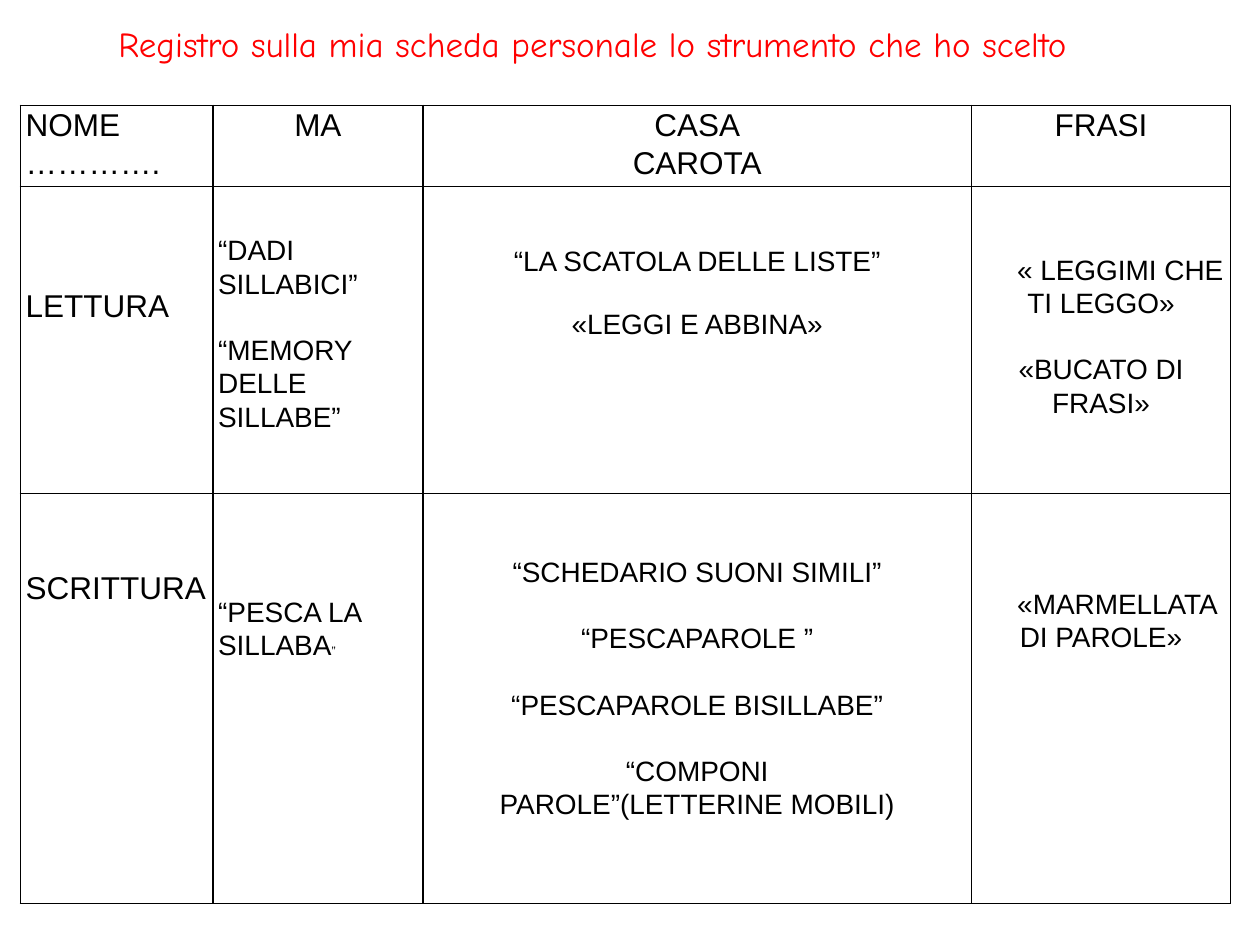
from dataclasses import dataclass

import pptx
import pptx.dml.color
import pptx.enum.text
import pptx.oxml
import pptx.oxml.ns
import pptx.util

Pt = pptx.util.Pt
RGB = pptx.dml.color.RGBColor
ALIGN = pptx.enum.text.PP_ALIGN
ANCHOR = pptx.enum.text.MSO_ANCHOR


@dataclass(frozen=True)
class Theme:
    ink: str = "000000"
    paper: str = "FFFFFF"
    title_color: str = "FF0000"
    title_font: str = "Comic Neue"
    body_font: str = "Arial"
    title_size: int = 20
    label_size: int = 18
    tool_size: int = 16
    small_size: int = 7
    line_spacing: float = 1.07
    border: int = 1


THEME = Theme()
GAP = 19  # space between two tools in a cell


@dataclass(frozen=True)
class Para:
    text: str
    before: float = 0
    indent: float = 0
    small_end: str = ""


@dataclass(frozen=True)
class Entry:
    """Content of one cell; top is the space above its first line."""
    paras: tuple
    top: float = 0
    size: int = THEME.tool_size
    align: object = ALIGN.CENTER


def label(*lines, top=0, align=ALIGN.LEFT):
    return Entry(tuple(Para(t) for t in lines), top, THEME.label_size, align)


def tools(top, *paras, align=ALIGN.CENTER):
    return Entry(paras, top, align=align)


COLUMNS = (110, 120, 313.5, 148)
ROWS = (46.3, 175.6, 234.3)
REGISTER = (
    (
        label("NOME", "…………."),
        label("MA", align=ALIGN.CENTER),
        label("CASA", "CAROTA", align=ALIGN.CENTER),
        label("FRASI", align=ALIGN.CENTER),
    ),
    (
        label("LETTURA", top=57),
        tools(27, Para("“DADI SILLABICI”"),
              Para("“MEMORY DELLE SILLABE”", GAP), align=ALIGN.LEFT),
        tools(33, Para("“LA SCATOLA DELLE LISTE”"),
              Para("«LEGGI E ABBINA»", 17)),
        tools(38, Para("« LEGGIMI CHE TI LEGGO»", indent=22),
              Para("«BUCATO DI FRASI»", GAP)),
    ),
    (
        label("SCRITTURA", top=43),
        tools(58, Para("“PESCA LA SILLABA", small_end="”"), align=ALIGN.LEFT),
        tools(35, Para("“SCHEDARIO SUONI SIMILI”"),
              Para("“PESCAPAROLE ”", GAP),
              Para("“PESCAPAROLE BISILLABE”", GAP),
              Para("“COMPONI", GAP),
              Para("PAROLE”(LETTERINE MOBILI)")),
        tools(53.5, Para("«MARMELLATA DI PAROLE»", indent=18)),
    ),
)


def set_all(obj, values):
    for name, value in values.items():
        setattr(obj, name, value)


def add_run(p, text, font, size, color):
    r = p.add_run()
    r.text = text
    set_all(r.font, {"name": font, "size": Pt(size), "bold": False})
    r.font.color.rgb = RGB.from_string(color)


def add_title(slide, left, top, width, height):
    sp = slide.shapes.title
    set_all(sp, {"left": Pt(left), "top": Pt(top),
                 "width": Pt(width), "height": Pt(height)})
    tf = sp.text_frame
    set_all(tf, {"word_wrap": True, "vertical_anchor": ANCHOR.TOP,
                 "auto_size": pptx.enum.text.MSO_AUTO_SIZE.NONE})
    p = tf.paragraphs[0]
    p.alignment = ALIGN.LEFT
    add_run(p, "Registro sulla mia scheda personale lo strumento che ho scelto",
            THEME.title_font, THEME.title_size, THEME.title_color)


def add_borders(cell):
    tc_pr = cell._tc.get_or_add_tcPr()
    for side in ("lnL", "lnR", "lnT", "lnB"):
        tc_pr.append(pptx.oxml.parse_xml(
            f'<a:{side} {pptx.oxml.ns.nsdecls("a")} w="{Pt(THEME.border)}">'
            f'<a:solidFill><a:srgbClr val="{THEME.ink}"/></a:solidFill>'
            f'</a:{side}>'))


def fill_cell(cell, entry):
    set_all(cell, {"margin_left": Pt(3), "margin_right": Pt(3),
                   "margin_top": Pt(entry.top), "margin_bottom": Pt(0),
                   "vertical_anchor": ANCHOR.TOP})
    add_borders(cell)
    cell.fill.solid()
    cell.fill.fore_color.rgb = RGB.from_string(THEME.paper)
    tf = cell.text_frame
    for i, para in enumerate(entry.paras):
        p = tf.add_paragraph() if i else tf.paragraphs[0]
        set_all(p, {"alignment": entry.align, "space_before": Pt(para.before),
                    "line_spacing": THEME.line_spacing})
        if para.indent:
            p._p.get_or_add_pPr().set("indent", str(Pt(para.indent)))
        add_run(p, para.text, THEME.body_font, entry.size, THEME.ink)
        if para.small_end:
            add_run(p, para.small_end, THEME.body_font, THEME.small_size, THEME.ink)


def add_register(slide, left, top):
    table = slide.shapes.add_table(
        len(ROWS), len(COLUMNS), Pt(left), Pt(top),
        Pt(sum(COLUMNS)), Pt(sum(ROWS))).table
    set_all(table, {"first_row": False, "horz_banding": False})
    for column, width in zip(table.columns, COLUMNS):
        column.width = Pt(width)
    for row, height, entries in zip(table.rows, ROWS, REGISTER):
        row.height = Pt(height)
        for cell, entry in zip(row.cells, entries):
            fill_cell(cell, entry)


def main():
    prs = pptx.Presentation()
    set_all(prs, {"slide_width": Pt(720), "slide_height": Pt(540)})
    slide = prs.slides.add_slide(prs.slide_layouts.get_by_name("Title Only"))
    add_title(slide, 60.5, 9.4, 602.6, 31.7)
    add_register(slide, 11.7, 60.2)
    prs.save("out.pptx")


if __name__ == "__main__":
    main()
